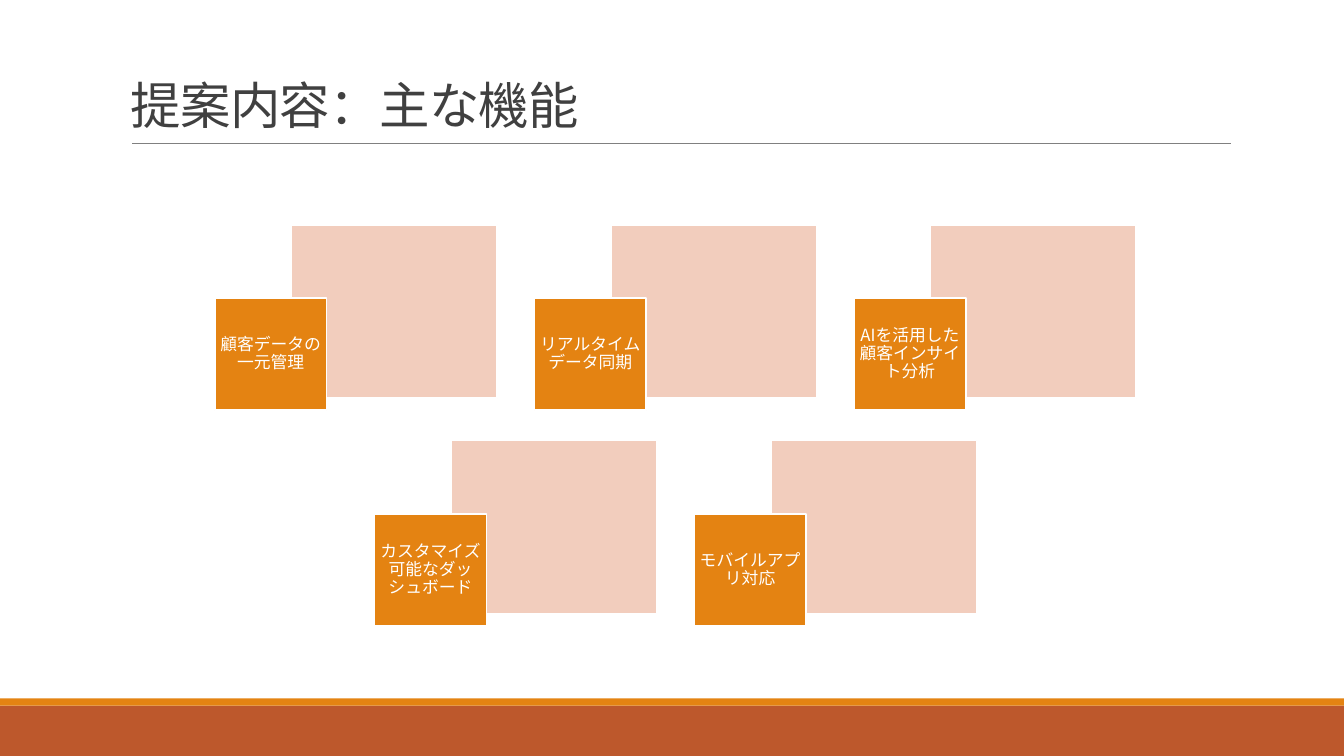
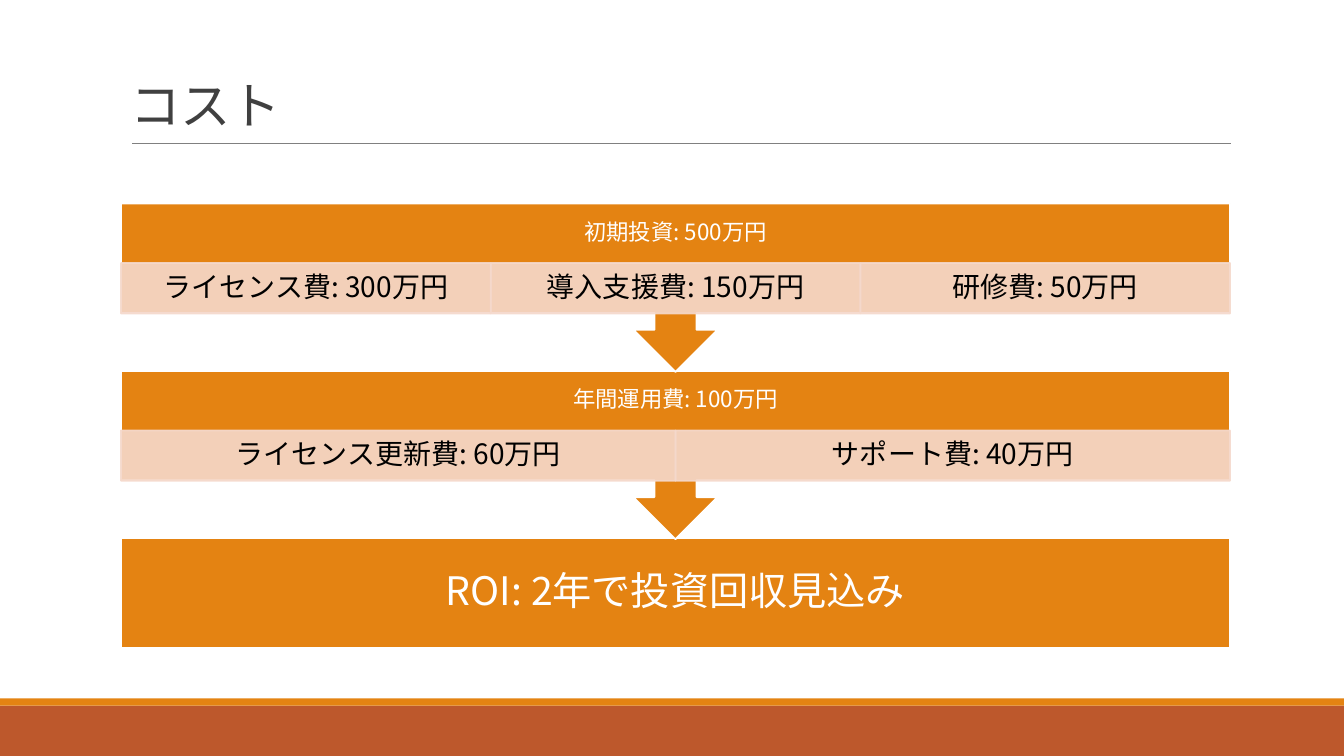
from dataclasses import dataclass

from lxml import etree
from pptx import Presentation
from pptx.dml.color import RGBColor
from pptx.enum.shapes import MSO_CONNECTOR, MSO_SHAPE
from pptx.enum.text import MSO_ANCHOR, PP_ALIGN
from pptx.oxml.ns import qn
from pptx.util import Inches, Pt

RECTANGLE = MSO_SHAPE.RECTANGLE
ARROW_CALLOUT = MSO_SHAPE.DOWN_ARROW_CALLOUT
STRAIGHT = MSO_CONNECTOR.STRAIGHT
MIDDLE, BOTTOM = MSO_ANCHOR.MIDDLE, MSO_ANCHOR.BOTTOM
LEFT, CENTER = PP_ALIGN.LEFT, PP_ALIGN.CENTER


@dataclass(frozen=True)
class Theme:
    font: str = "Noto Sans CJK JP"
    accent: str = "E48312"
    footer: str = "BD582C"
    tile: str = "F2CDBD"
    cell: str = "F5D9CC"
    title: str = "404040"
    rule: str = "808080"
    white: str = "FFFFFF"
    black: str = "000000"
    title_size: int = 36
    result_size: int = 28
    item_size: int = 20
    stage_size: int = 16
    label_size: int = 12
    outline: float = 1.25


THEME = Theme()
SLIDE_WIDTH, SLIDE_HEIGHT = 13.33, 7.5
BODY_LEFT, BODY_WIDTH = 1.2, 11

FEATURES = [
    ["顧客データの一元管理", "リアルタイムデータ同期", "AIを活用した顧客インサイト分析"],
    ["カスタマイズ可能なダッシュボード", "モバイルアプリ対応"],
]
COST_STAGES = [
    ("初期投資: 500万円", ["ライセンス費: 300万円", "導入支援費: 150万円", "研修費: 50万円"]),
    ("年間運用費: 100万円", ["ライセンス更新費: 60万円", "サポート費: 40万円"]),
]
COST_RESULT = "ROI: 2年で投資回収見込み"


def add_block(slide, box, fill, line=None, preset=RECTANGLE):
    shape = slide.shapes.add_shape(preset, *map(Inches, box))
    shape.shadow.inherit = False
    shape.fill.solid()
    shape.fill.fore_color.rgb = RGBColor.from_string(fill)
    if line:
        shape.line.color.rgb = RGBColor.from_string(line)
        shape.line.width = Pt(THEME.outline)
    else:
        shape.line.fill.background()
    return shape


def write(shape, text, size, color, insets, align=CENTER, anchor=MIDDLE, line_spacing=0.9, tracking=0):
    """Fill a shape with one paragraph; insets are left, top, right, bottom in inches."""
    frame = shape.text_frame
    frame.word_wrap = True
    frame.vertical_anchor = anchor
    frame.margin_left, frame.margin_top, frame.margin_right, frame.margin_bottom = map(Inches, insets)
    paragraph = frame.paragraphs[0]
    paragraph.text = text
    paragraph.alignment = align
    paragraph.line_spacing = line_spacing
    paragraph.font.size = Pt(size)
    paragraph.font.color.rgb = RGBColor.from_string(color)
    paragraph.font.name = THEME.font
    for properties in shape.element.iter(qn("a:defRPr")):
        properties.set("spc", str(tracking))
        etree.SubElement(properties, qn("a:ea"), typeface=THEME.font)


def set_opacity(shape, percent):
    """Apply the opacity to both the fill and the outline."""
    for color in shape.element.spPr.iter(qn("a:srgbClr")):
        etree.SubElement(color, qn("a:alpha"), val=str(percent * 1000))


def add_base_slide(presentation, title):
    """Add a blank slide with the shared title, rule and footer bands."""
    slide = presentation.slides.add_slide(presentation.slide_layouts[6])
    add_block(slide, (0, 7, SLIDE_WIDTH, 0.5), THEME.footer)
    add_block(slide, (0, 6.93, SLIDE_WIDTH, 0.07), THEME.accent)
    rule = slide.shapes.add_connector(STRAIGHT, *map(Inches, (1.31, 1.42, 12.21, 1.42)))
    rule.line.color.rgb = RGBColor.from_string(THEME.rule)
    rule.line.width = Pt(0.5)
    etree.SubElement(rule.element.spPr, qn("a:effectLst"))
    title_box = slide.shapes.add_textbox(*map(Inches, (BODY_LEFT, 0.31, BODY_WIDTH, 1.08)))
    write(title_box, title, THEME.title_size, THEME.title, (0.1, 0.05, 0.1, 0.05),
          LEFT, BOTTOM, line_spacing=0.85, tracking=-50)
    return slide


def add_feature(slide, left, top, text):
    """Add a pale tile with a square label over its lower left corner."""
    add_block(slide, (left + 0.76, top, 2.04, 1.72), THEME.tile, THEME.white)
    label = add_block(slide, (left, top + 0.73, 1.11, 1.11), THEME.accent, THEME.white)
    write(label, text, THEME.label_size, THEME.white, (0.05,) * 4)


def add_feature_grid(slide, left, top, width, rows):
    """Place rows of features, each row centred in the width."""
    feature_width, gap, row_pitch = 2.8, 0.37, 2.14
    pitch = feature_width + gap
    for row_index, row in enumerate(rows):
        row_left = left + (width - len(row) * pitch + gap) / 2
        for column, text in enumerate(row):
            add_feature(slide, row_left + column * pitch, top + row_index * row_pitch, text)


def add_cost_stage(slide, left, top, width, heading, items):
    """Add an arrow callout with a heading above a row of equal cells."""
    cell_height = 0.5
    callout = add_block(slide, (left, top, width, 1.67), THEME.accent, THEME.white, ARROW_CALLOUT)
    write(callout, heading, THEME.stage_size, THEME.white, (0.12, 0.12, 0.12, 0.12 + cell_height))
    cell_width = width / len(items)
    for column, item in enumerate(items):
        box = (left + column * cell_width, top + 0.59, cell_width, cell_height)
        cell = add_block(slide, box, THEME.cell, THEME.cell)
        set_opacity(cell, 90)
        write(cell, item, THEME.item_size, THEME.black, (0.16, 0.03, 0.16, 0.03))


def add_cost_flow(slide, left, top, width, stages, result):
    """Stack the stages down to the result, drawn from the bottom up so arrows overlap."""
    pitch = 1.66
    result_box = add_block(slide, (left, top + len(stages) * pitch, width, 1.09), THEME.accent, THEME.white)
    write(result_box, result, THEME.result_size, THEME.white, (0.22,) * 4)
    for index, (heading, items) in reversed(list(enumerate(stages))):
        add_cost_stage(slide, left, top + index * pitch, width, heading, items)


def main():
    presentation = Presentation()
    presentation.slide_width = Inches(SLIDE_WIDTH)
    presentation.slide_height = Inches(SLIDE_HEIGHT)
    features = add_base_slide(presentation, "提案内容：主な機能")
    add_feature_grid(features, BODY_LEFT, 2.23, BODY_WIDTH, FEATURES)
    costs = add_base_slide(presentation, "コスト")
    add_cost_flow(costs, BODY_LEFT, 2.02, BODY_WIDTH, COST_STAGES, COST_RESULT)
    presentation.save("out.pptx")


if __name__ == "__main__":
    main()
